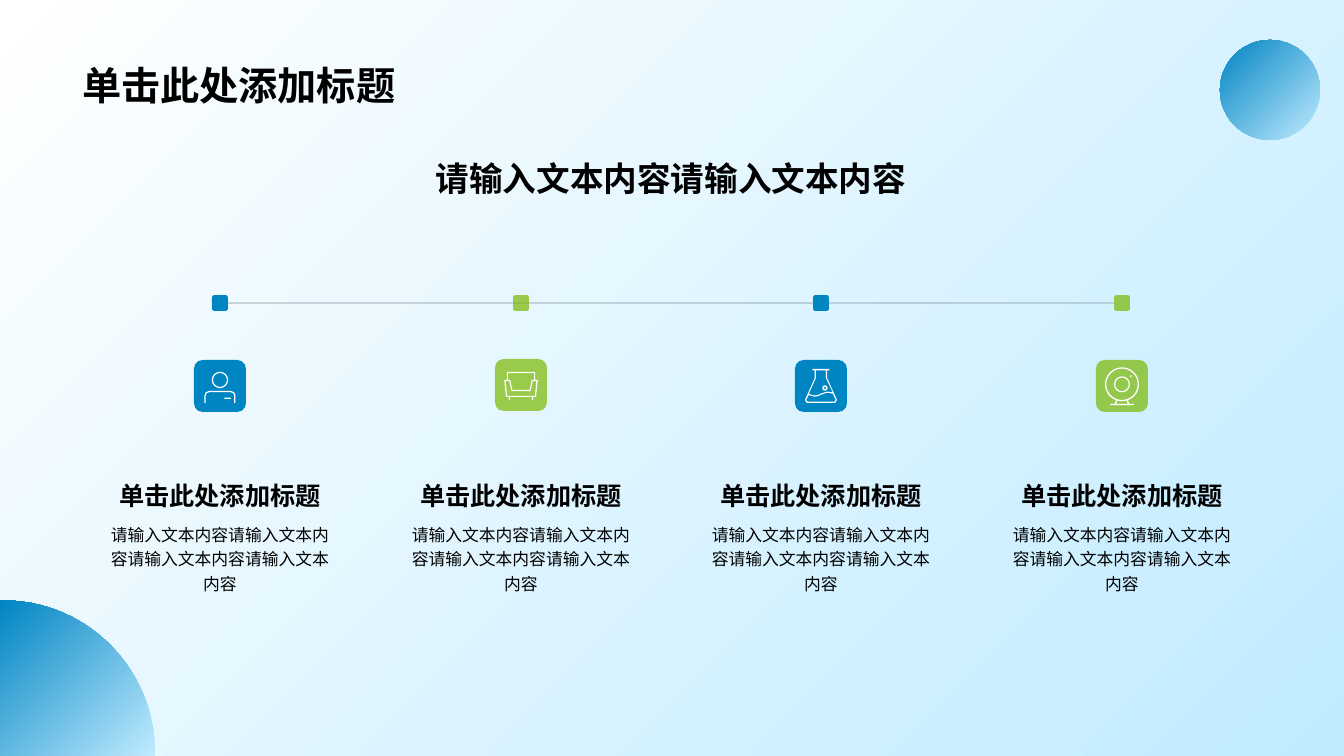
from lxml.etree import SubElement
from pptx import Presentation
from pptx.dml.color import RGBColor
from pptx.enum.lang import MSO_LANGUAGE_ID as Lang
from pptx.enum.shapes import MSO_CONNECTOR as Connector, MSO_SHAPE as Shape
from pptx.enum.text import MSO_ANCHOR as Anchor, PP_ALIGN as Align
from pptx.oxml.ns import qn
from pptx.util import Pt

PX = 9072        # EMU per pixel
FINE = PX / 10   # outlines are drawn in tenths of a pixel
BLUE, GREEN, PALE, WHITE = "0085C3", "7AB800", "C0EBFF", "FFFFFF"


def rgb(color):
    return RGBColor.from_string(color)


def write(box, place, text, size, bold=False, align=Align.CENTER,
          anchor=Anchor.TOP, spacing=1.0):
    box.left, box.top, box.width, box.height = [n * PX for n in place]
    frame = box.text_frame
    frame.word_wrap = True
    frame.vertical_anchor = anchor
    paragraph = frame.paragraphs[0]
    paragraph.alignment = align
    paragraph.line_spacing = spacing
    run = paragraph.add_run()
    run.text = text
    run.font.name, run.font.size, run.font.bold = "Arial", Pt(size), bold
    run.font.color.rgb = rgb("000000")
    run.font.language_id = Lang.SIMPLIFIED_CHINESE


prs = Presentation()
prs.slide_width, prs.slide_height = 1344 * PX, 756 * PX
slide = prs.slides.add_slide(prs.slide_layouts[5])
shapes = slide.shapes

# Background and the two gradient discs
builder = shapes.build_freeform(40, 6005, FINE)
builder.add_line_segments([(870, 6005), (1550, 6690), (1550, 7530),
                           (1550, 7560), (0, 7560), (0, 6005)])
corner_disc = builder.convert_to_shape()
curved = [(corner_disc, 1)]  # outlines whose first segments are curves
top_disc = shapes.add_shape(Shape.OVAL, 1220 * PX, 40 * PX, 100 * PX, 100 * PX)
for disc in (corner_disc, top_disc):
    disc.shadow.inherit = False
    disc.line.fill.background()
for fill, end_color in ((slide.background.fill, WHITE),
                        (corner_disc.fill, BLUE), (top_disc.fill, BLUE)):
    fill.gradient()
    fill.gradient_angle = 135
    for stop, color, position in zip(fill.gradient_stops, (PALE, end_color), (0, 1)):
        stop.color.rgb = rgb(color)
        stop.position = position

# Headings
write(shapes.title, (72, 14, 1198, 99), "单击此处添加标题", 28, True,
      Align.LEFT, Anchor.BOTTOM)
write(shapes.add_textbox(0, 0, 0, 0), (72, 153, 1198, 75),
      "请输入文本内容请输入文本内容", 24, True)

# Timeline
timeline = shapes.add_connector(Connector.STRAIGHT, 228 * PX, 303 * PX,
                                1114 * PX, 303 * PX)
timeline.line.width = Pt(1)
timeline.line.color.rgb = rgb("778495")
SubElement(next(timeline._element.iter(qn("a:srgbClr"))), qn("a:alpha"), val="50000")
SubElement(timeline._element.spPr, qn("a:effectLst"))

# Icon outlines around the tile centre: circles (x, y, radius),
# right halves that are mirrored, and free polygons
wave = [(-122, 78), (-70, 95), (-30, 90), (5, 74), (60, 56), (118, 64)]
person = dict(
    circles=[(0, -60, 82), (0, -60, 70)],
    halves=[[(110, 50), (142, 63), (155, 95), (155, 170), (143, 170),
             (143, 98), (133, 73), (105, 62)]],
    polygons=[[(45, 118), (110, 118), (110, 130), (45, 130)]])
armchair = dict(
    circles=[],
    halves=[[(142, -130), (142, -50), (168, -50), (150, 120), (122, 120),
             (122, 148), (110, 148), (110, 120)],
            [(95, 62), (118, -38), (154, -38), (139, 108)],
            [(130, -118), (130, -50), (107, -50), (86, 50)]],
    polygons=[])
flask = dict(
    circles=[(40, 20, 27), (40, 20, 14)],
    halves=[[(85, -170), (85, -156), (62, -156), (62, -80), (160, 140), (143, 168)]],
    polygons=[[(-50, -156), (-50, -80)] + wave + [(50, -80), (50, -156)],
              [(x, y + 12) for x, y in wave]
              + [(148, 140), (136, 156), (-136, 156), (-148, 140)]])
webcam = dict(
    circles=[(0, -17, 170), (0, -17, 157), (0, -17, 80), (0, -17, 68), (88, -98, 10)],
    halves=[[(58, 178), (48, 148), (60, 145), (74, 178), (120, 178), (120, 192)]],
    polygons=[])

# Start, control and end points of a unit circle made of four curves
K = 0.55
unit_circle = [(1, 0), (1, K), (K, 1), (0, 1), (-K, 1), (-1, K), (-1, 0),
               (-1, -K), (-K, -1), (0, -1), (K, -1), (1, -K), (1, 0)]

# Four columns: marker, tile, icon, heading, text
columns = [(BLUE, 360, person), (GREEN, 359, armchair),
           (BLUE, 360, flask), (GREEN, 360, webcam)]
for index, (color, tile_top, icon) in enumerate(columns):
    center = round(220 + index * 902 / 3)

    for top, size in ((295, 16), (tile_top, 52)):
        square = shapes.add_shape(Shape.ROUNDED_RECTANGLE, (center - size // 2) * PX,
                                  top * PX, size * PX, size * PX)
        square.shadow.inherit = False
        square.line.fill.background()
        square.fill.solid()
        square.fill.fore_color.rgb = rgb(color)
        if color == GREEN:
            tint = next(square._element.spPr.iter(qn("a:srgbClr")))
            SubElement(tint, qn("a:alpha"), val="70000")

    outlines = [[(x + r * u, y + r * v) for u, v in unit_circle]
                for x, y, r in icon["circles"]]
    outlines += [half + [(-x, y) for x, y in reversed(half)] for half in icon["halves"]]
    outlines += icon["polygons"]
    builder = shapes.build_freeform(*outlines[0][0], FINE)
    for number, outline in enumerate(outlines):
        if number:
            builder.move_to(*outline[0])
        builder.add_line_segments(outline[1:])
    symbol = builder.convert_to_shape(center * PX, (tile_top + 26) * PX)
    symbol.shadow.inherit = False
    symbol.line.fill.background()
    symbol.fill.solid()
    symbol.fill.fore_color.rgb = rgb(WHITE)
    curved.append((symbol, 4 * len(icon["circles"])))

    write(shapes.add_textbox(0, 0, 0, 0), (center - 120, 452, 240, 64),
          "单击此处添加标题", 18, True, anchor=Anchor.BOTTOM)
    write(shapes.add_textbox(0, 0, 0, 0), (center - 120, 516, 240, 131),
          "请输入文本内容" * 4, 12, spacing=1.2)

# Turn each leading group of three segments into one curve
for outline_shape, curve_count in curved:
    segments = list(outline_shape._element.iter(qn("a:lnTo")))
    for first in range(0, 3 * curve_count, 3):
        start, *others = segments[first:first + 3]
        start.tag = qn("a:cubicBezTo")
        for segment in others:
            start.append(segment[0])
            segment.getparent().remove(segment)

prs.save("out.pptx")
